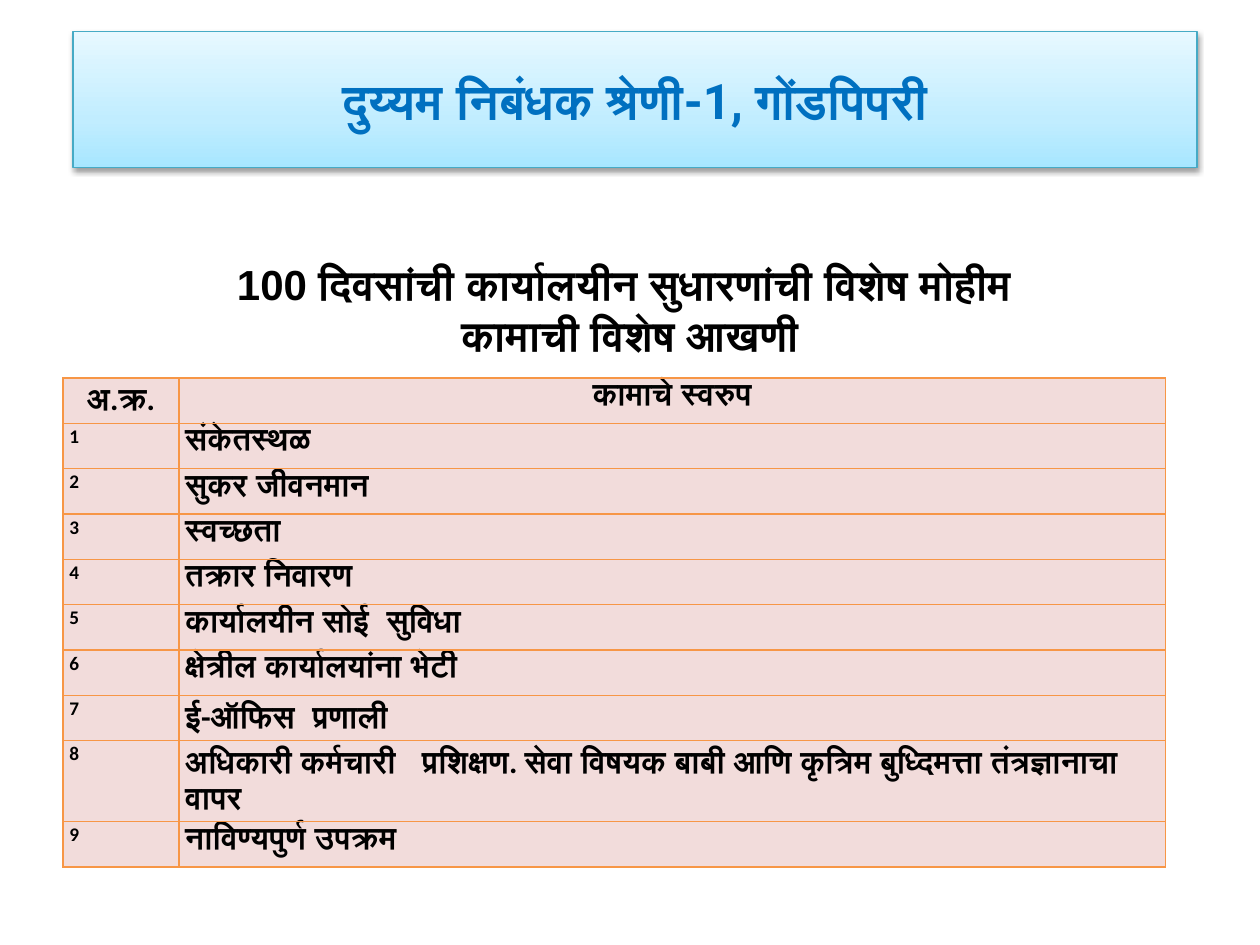
from lxml import etree
from pptx import Presentation
from pptx.dml.color import RGBColor
from pptx.enum import shapes, text
from pptx.oxml import parse_xml
from pptx.oxml.ns import nsdecls
from pptx.util import Inches, Pt

TITLE = "दुय्यम निबंधक श्रेणी-1, गोंडपिपरी"
HEADING = ["100 दिवसांची कार्यालयीन सुधारणांची विशेष मोहीम ", "कामाची विशेष आखणी"]
HEADER = ("अ.क्र.", "कामाचे स्वरुप")
TASKS = [
    "संकेतस्थळ",
    "सुकर जीवनमान",
    "स्वच्छता",
    "तक्रार निवारण",
    "कार्यालयीन सोई  सुविधा",
    "क्षेत्रील कार्यालयांना भेटी",
    "ई-ऑफिस  प्रणाली",
    "अधिकारी कर्मचारी   प्रशिक्षण. सेवा विषयक बाबी आणि कृत्रिम बुध्दिमत्ता तंत्रज्ञानाचा वापर",
    "नाविण्यपुर्ण उपक्रम",
]
BANNER_STOPS = [(0, "A7E6FF"), (35, "C1EDFF"), (100, "E7F8FF")]
COLUMNS = (0.92, 7.83)
ROW_HEIGHT = 0.36
CENTER = text.PP_ALIGN.CENTER


def color(value):
    return RGBColor.from_string(value)


def write(p, words, font, size, align=None, fill="000000"):
    p.text = words
    p.alignment = align
    p.font.name, p.font.size, p.font.bold = font, Pt(size), True
    p.font.color.rgb = color(fill)


def fill_upward(sp, stops):
    """Gradient fill running from the bottom edge to the top."""
    sp.fill.gradient()
    sp.fill.gradient_angle = 90
    stop_list = sp._element.spPr.find(".//{*}gsLst")
    for old in list(stop_list):
        stop_list.remove(old)
    for position, value in stops:
        stop_list.append(parse_xml(
            f'<a:gs {nsdecls("a")} pos="{position * 1000}"><a:srgbClr val="{value}"/></a:gs>'))


def drop_shadow(sp):
    sp.shadow.inherit = False
    sp._element.spPr.find("{*}effectLst").append(parse_xml(
        f'<a:outerShdw {nsdecls("a")} blurRad="{Pt(3.1)}" dist="{Pt(1.6)}" dir="5400000" '
        'rotWithShape="0"><a:srgbClr val="000000"><a:alpha val="38000"/></a:srgbClr></a:outerShdw>'))


def border(cell, value, width):
    tc_pr = cell._tc.get_or_add_tcPr()
    for i, side in enumerate("LRTB"):
        tc_pr.insert(i, parse_xml(
            f'<a:ln{side} {nsdecls("a")} w="{Pt(width)}"><a:solidFill>'
            f'<a:srgbClr val="{value}"/></a:solidFill></a:ln{side}>'))


def add_banner(slide):
    sp = slide.shapes.add_shape(shapes.MSO_SHAPE.RECTANGLE,
                                Inches(0.58), Inches(0.25), Inches(8.92), Inches(1.08))
    fill_upward(sp, BANNER_STOPS)
    sp.line.color.rgb = color("46AAC5")
    sp.line.width = Pt(0.75)
    drop_shadow(sp)
    tf = sp.text_frame
    tf.vertical_anchor = text.MSO_ANCHOR.MIDDLE
    write(tf.paragraphs[0], TITLE, "Roboto", 28, CENTER, "0070C0")


def add_heading(slide, width):
    tf = slide.shapes.add_textbox(0, Inches(2), width, Inches(0.91)).text_frame
    tf.word_wrap = True
    tf.auto_size = text.MSO_AUTO_SIZE.SHAPE_TO_FIT_TEXT
    tf.vertical_anchor = text.MSO_ANCHOR.MIDDLE
    for i, line in enumerate(HEADING):
        p = tf.add_paragraph() if i else tf.paragraphs[0]
        write(p, line, "Arial", 24, CENTER)


def add_task_table(slide):
    rows = [HEADER] + [(str(n), task) for n, task in enumerate(TASKS, 1)]
    table = slide.shapes.add_table(len(rows), len(COLUMNS), Inches(0.5), Inches(3),
                                   Inches(sum(COLUMNS)), Inches(ROW_HEIGHT * len(rows))).table
    for column, width in zip(table.columns, COLUMNS):
        column.width = Inches(width)
    for r, row in enumerate(rows):
        table.rows[r].height = Inches(ROW_HEIGHT)
        for c, words in enumerate(row):
            cell = table.cell(r, c)
            cell.margin_left = cell.margin_right = Inches(0.05)
            cell.margin_top = cell.margin_bottom = 0
            cell.fill.solid()
            cell.fill.fore_color.rgb = color("F2DCDB")
            border(cell, "F79646", 1)
            p = cell.text_frame.paragraphs[0]
            is_number = r > 0 and c == 0
            write(p, words, "Calibri", 11 if is_number else 18, None if r else CENTER)
            p.line_spacing = 1.07


def main():
    prs = Presentation()
    prs.slide_width, prs.slide_height = Inches(10), Inches(7.5)
    slide = prs.slides.add_slide(prs.slide_layouts[6])
    add_banner(slide)
    add_heading(slide, prs.slide_width)
    add_task_table(slide)
    prs.save("out.pptx")


if __name__ == "__main__":
    main()
